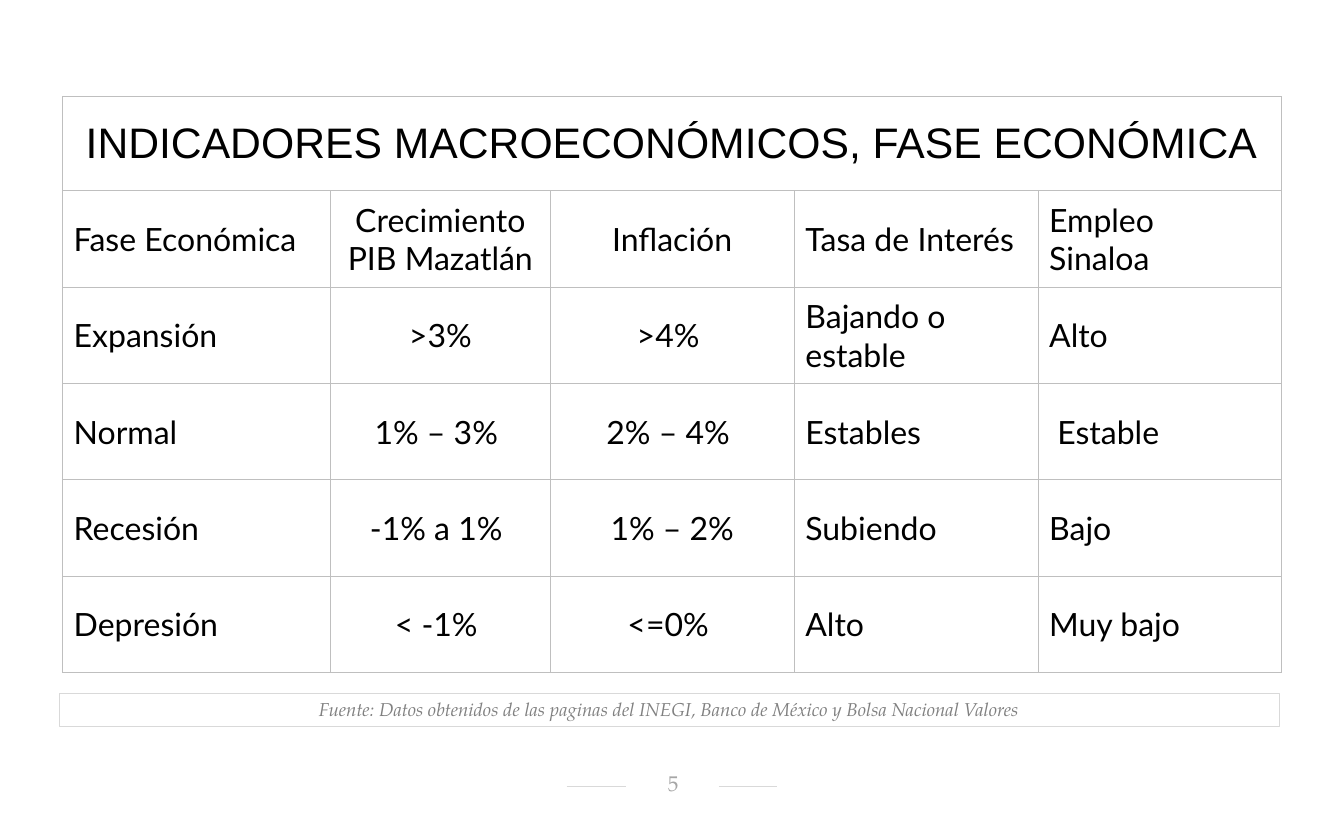
import pptx
import pptx.dml.color
import pptx.enum.shapes
import pptx.enum.text
import pptx.oxml
import pptx.oxml.ns
import pptx.util
from pptx.util import Cm

CENTER = pptx.enum.text.PP_ALIGN.CENTER
LEFT = pptx.enum.text.PP_ALIGN.LEFT
MIDDLE = pptx.enum.text.MSO_ANCHOR.MIDDLE
SERIF = "TeX Gyre Pagella"


def color(value):
    return pptx.dml.color.RGBColor.from_string(value)


class Sheet:
    """Draws elements on one slide in a shared style."""

    rule = "D9D9D9"
    grid = "BFBFBF"
    ink = "000000"

    def __init__(self, slide):
        self.slide = slide

    def set_text(self, frame, text, size, font, ink, align, italic=False):
        frame.text = text
        frame.word_wrap = True
        for paragraph in frame.paragraphs:
            paragraph.alignment = align
            for run in paragraph.runs:
                run.font.size = pptx.util.Pt(size)
                run.font.name = font
                run.font.italic = italic
                run.font.color.rgb = color(ink)

    def line(self, left, right, y):
        line = self.slide.shapes.add_connector(
            pptx.enum.shapes.MSO_CONNECTOR.STRAIGHT, Cm(left), Cm(y), Cm(right), Cm(y))
        line.line.color.rgb = color(self.rule)
        line.line.width = pptx.util.Pt(0.5)
        properties = line._element.spPr
        properties.append(properties.makeelement(pptx.oxml.ns.qn("a:effectLst"), {}))

    def label(self, left, top, width, height, text, size, ink):
        frame = self.slide.shapes.add_textbox(
            Cm(left), Cm(top), Cm(width), Cm(height)).text_frame
        frame.margin_left, frame.margin_right = Cm(0.3), Cm(0.25)
        frame.margin_top, frame.margin_bottom = Cm(0.05), Cm(0.13)
        frame.vertical_anchor = MIDDLE
        self.set_text(frame, text, size, SERIF, ink, CENTER)

    def box(self, left, top, width, height, text, size, ink):
        box = self.slide.shapes.add_shape(
            pptx.enum.shapes.MSO_SHAPE.RECTANGLE, Cm(left), Cm(top), Cm(width), Cm(height))
        box.shadow.inherit = False
        box.fill.background()
        box.line.color.rgb = color(self.rule)
        box.line.width = pptx.util.Pt(0.75)
        box.text_frame.vertical_anchor = pptx.enum.text.MSO_ANCHOR.TOP
        self.set_text(box.text_frame, text, size, SERIF, ink, CENTER, italic=True)
        box.text_frame.auto_size = pptx.enum.text.MSO_AUTO_SIZE.SHAPE_TO_FIT_TEXT

    def cell(self, cell, text, size, font, align, pad):
        cell.margin_left = cell.margin_right = Cm(0.3)
        cell.margin_top, cell.margin_bottom = Cm(pad[0]), Cm(pad[1])
        cell.vertical_anchor = MIDDLE
        properties = cell._tc.get_or_add_tcPr()
        for side in ("lnL", "lnR", "lnT", "lnB"):
            properties.append(pptx.oxml.parse_xml(
                f'<a:{side} {pptx.oxml.ns.nsdecls("a")} w="6350"><a:solidFill>'
                f'<a:srgbClr val="{self.grid}"/></a:solidFill></a:{side}>'))
        cell.fill.background()
        if text:
            self.set_text(cell.text_frame, text, size, font, self.ink, align)

    def table(self, left, top, widths, heights, title, rows, aligns):
        table = self.slide.shapes.add_table(
            len(heights), len(widths), Cm(left), Cm(top),
            Cm(sum(widths)), Cm(sum(heights))).table
        table.first_row = table.horz_banding = False
        for column, width in zip(table.columns, widths):
            column.width = Cm(width)
        for row, height in zip(table.rows, heights):
            row.height = Cm(height)
        table.cell(0, 0).merge(table.cell(0, len(widths) - 1))
        for c, align in enumerate(aligns):
            self.cell(table.cell(0, c), "" if c else title, 32, "Arial", CENTER, (0.08, 0.08))
            for r, row in enumerate(rows, start=1):
                self.cell(table.cell(r, c), row[c], 24, "Lato", align, (0.03, 0))


def main():
    deck = pptx.Presentation()
    deck.slide_width, deck.slide_height = Cm(35.56), Cm(21.59)
    sheet = Sheet(deck.slides.add_slide(deck.slide_layouts[6]))

    # Page number between two short rules
    sheet.line(14.99, 16.56, 20.8)
    sheet.line(19.02, 20.57, 20.8)
    sheet.label(16.54, 20.42, 2.49, 0.66, "5", 16, "A6A6A6")

    # Source note
    sheet.box(1.57, 18.34, 32.28, 0.89,
              "Fuente: Datos obtenidos de las paginas del INEGI, Banco de México "
              "y Bolsa Nacional Valores", 14, "808080")

    # Indicators by economic phase
    phases = [
        ("Fase Económica", "Crecimiento PIB Mazatlán", "Inflación", "Tasa de Interés",
         "Empleo\nSinaloa"),
        ("Expansión", ">3%", ">4% ", "Bajando o estable", "Alto"),
        ("Normal", "1% – 3% ", "2% – 4% ", "Estables", " Estable"),
        ("Recesión", "-1% a 1% ", "1% – 2%", "Subiendo", "Bajo"),
        ("Depresión", "< -1% ", "<=0% ", "Alto", "Muy bajo"),
    ]
    sheet.table(1.65, 2.55, [7.09, 5.82] + [6.45] * 3, [2.49] + [2.55] * len(phases),
                "INDICADORES MACROECONÓMICOS, FASE ECONÓMICA", phases,
                [LEFT, CENTER, CENTER, LEFT, LEFT])

    deck.save("out.pptx")


if __name__ == "__main__":
    main()
